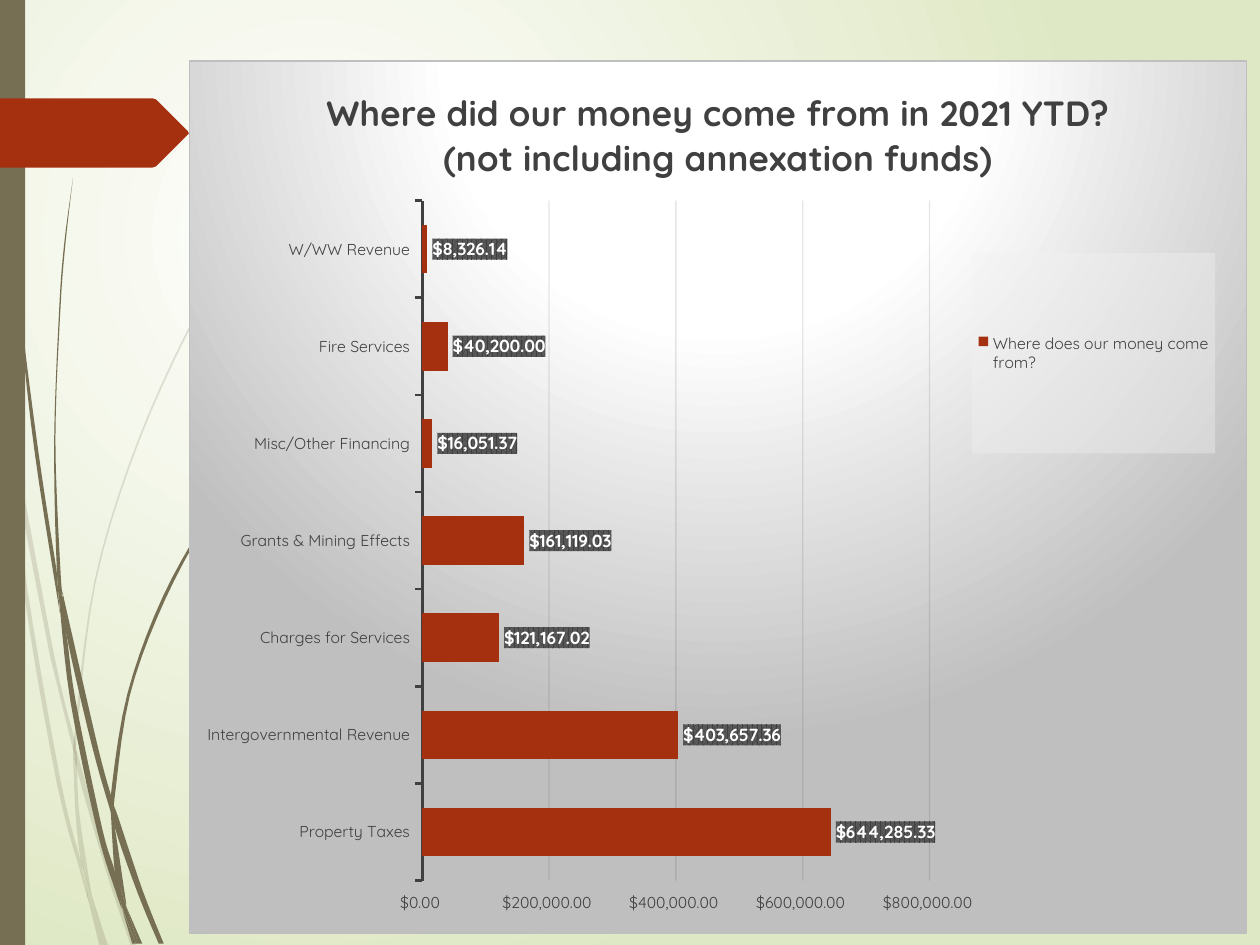
"""Build a slide with a bar chart of 2021 revenue sources beside a grass motif."""
import pptx
import pptx.chart.data
import pptx.dml.color
import pptx.enum.chart
import pptx.oxml
import pptx.oxml.ns
import pptx.util
from pptx.util import Inches

THEME = {
    "font": "Quicksand",
    "olive": "766F54", "rust": "A53010", "ink": "404040", "white": "FFFFFF",
    "border": "BFBFBF", "leaf": "DFE8C4", "grid": "0D0D0D", "legend": "F2F2F2", "stripe": "595959",
    "title_size": 20, "label_size": 10, "axis_size": 9,
}
rgb = {key: pptx.dml.color.RGBColor.from_string(value)
       for key, value in THEME.items() if isinstance(value, str) and key != "font"}
namespaces = pptx.oxml.ns.nsdecls("a", "c")
qn = pptx.oxml.ns.qn


def radial_gradient(stops, left, top, right, bottom):
    """Return the XML of a circular gradient."""
    marks = "".join(f'<a:gs pos="{position * 1000}"><a:srgbClr val="{THEME[key]}"/></a:gs>'
                    for position, key in stops)
    return (f'<a:gradFill {namespaces} rotWithShape="1"><a:gsLst>{marks}</a:gsLst><a:path path="circle">'
            f'<a:fillToRect l="{left * 1000}" t="{top * 1000}" r="{right * 1000}" b="{bottom * 1000}"/>'
            '</a:path></a:gradFill>')


def smooth_edge(points, steps=5):
    """Return points along a smooth curve through the given points in inches."""
    ends = [points[0], *points, points[-1]]
    curve = []
    for p0, p1, p2, p3 in zip(ends, ends[1:], ends[2:], ends[3:]):
        for step in range(steps):
            t = step / steps
            curve.append(tuple(
                Inches(b + t * (c - a) / 2 + t * t * (a - 2.5 * b + 2 * c - d / 2)
                       + t ** 3 * (1.5 * (b - c) + (d - a) / 2))
                for a, b, c, d in zip(p0, p1, p2, p3)))
    return curve + [(Inches(points[-1][0]), Inches(points[-1][1]))]


deck = pptx.Presentation()
deck.slide_width, deck.slide_height = Inches(10), Inches(7.5)
slide = deck.slides.add_slide(deck.slide_layouts[6])
slide.background.fill.solid()
solid = next(slide.background._cSld.iter(qn("a:solidFill")))
solid.getparent().replace(solid, pptx.oxml.parse_xml(
    radial_gradient([(0, "white"), (100, "leaf")], 50, 50, 100, 100)))

pale_blades = [
    ([(0.08, 3.5), (0.06, 3.22), (0, 2.82)], [(0, 2.99), (0.07, 3.44), (0.08, 3.5)]),
    ([(0.4, 5.22), (0.59, 5.99)],
     [(0.59, 5.86), (0.43, 5.2), (0.1, 3.45), (0.12, 3.76), (0.4, 5.22)]),
    ([(0.61, 5.96), (0.61, 6.1), (0.85, 6.94), (1.04, 7.51)],
     [(1.08, 7.51), (0.88, 6.92), (0.64, 6.07), (0.61, 5.96)]),
    ([(0.83, 7.51), (0.86, 7.51)], [(0.73, 7.11), (0.83, 7.51)]),
    ([(0.64, 6.83), (0.48, 6.19), (0.22, 4.69), (0.12, 3.76), (0.08, 3.5)],
     [(0.08, 3.5), (0.19, 4.7), (0.45, 6.21), (0.64, 6.93), (0.7, 7.14), (0.69, 7.07)]),
    ([(0.58, 5.99), (0.6, 6.46), (0.64, 6.83), (0.67, 6.92), (0.73, 7.11)],
     [(0.72, 7.06), (0.63, 6.46), (0.61, 6.1), (0.58, 5.99)]),
    ([(0.61, 5.96), (0.61, 5.84), (0.76, 4.62), (1.11, 3.49), (1.59, 2.45), (2.01, 1.75), (2.17, 1.54)],
     [(2.17, 1.53), (2.01, 1.75), (1.58, 2.44), (1.1, 3.48), (0.75, 4.61), (0.59, 5.84), (0.61, 5.96)]),
    ([(0.7, 7.14), (0.79, 7.51)], [(0.82, 7.51), (0.7, 7.14)]),
    ([(0.61, 6.08), (0.61, 5.96), (0.59, 5.86)], [(0.58, 5.99), (0.61, 6.08)]),
    ([(0.67, 6.92), (0.65, 6.83), (0.69, 7.07), (0.7, 7.14), (0.82, 7.51)],
     [(0.83, 7.51), (0.73, 7.11), (0.67, 6.92)]),
]
dark_blades = [
    ([(0.02, 0), (0.05, 1.1), (0.14, 2.33), (0.27, 3.55), (0.46, 4.77), (0.47, 4.81)],
     [(0.45, 4.53), (0.3, 3.55), (0.15, 2.32), (0.06, 1.09), (0.03, 0)]),
    ([(0.5, 4.72), (0.53, 5.05), (0.73, 5.92), (0.88, 6.45)],
     [(0.88, 6.31), (0.77, 5.9), (0.5, 4.72)]),
    ([(0.91, 6.41), (0.91, 6.56), (1.09, 7.08), (1.26, 7.49)],
     [(1.3, 7.49), (1.13, 7.06), (0.94, 6.49), (0.91, 6.41)]),
    ([(0.47, 4.77), (0.56, 5.57), (0.77, 6.59), (0.92, 7.08), (0.97, 7.22)],
     [(0.96, 7.17), (0.91, 6.91), (0.81, 6.57), (0.6, 5.56), (0.53, 5.05), (0.47, 4.77)]),
    ([(0.5, 4.72), (0.48, 4.53), (0.44, 3.49), (0.48, 2.45), (0.52, 1.93), (0.58, 1.41)],
     [(0.58, 1.41), (0.51, 1.93), (0.47, 2.45), (0.43, 3.49), (0.45, 4.49), (0.49, 4.72)]),
    ([(1, 7.19), (1.1, 7.49)], [(1.13, 7.49), (1, 7.19)]),
    ([(0.45, 4.49), (0.47, 4.77), (0.53, 5.05)], [(0.5, 4.72), (0.49, 4.72), (0.45, 4.49)]),
    ([(0.91, 6.41), (0.91, 6.33), (1.03, 5.52), (1.31, 4.76), (1.69, 4.06), (2.03, 3.59), (2.16, 3.44)],
     [(2.15, 3.44), (2.03, 3.58), (1.68, 4.05), (1.29, 4.74), (1.01, 5.51), (0.88, 6.31), (0.91, 6.41)]),
    ([(0.97, 7.22), (1.05, 7.49)], [(1.08, 7.49), (0.97, 7.22)]),
    ([(0.88, 6.45), (0.91, 6.91), (0.96, 7.06), (1, 7.19)],
     [(1, 7.16), (0.91, 6.56), (0.88, 6.45)]),
    ([(0.88, 6.45), (0.91, 6.56), (0.91, 6.41)], [(0.88, 6.31), (0.88, 6.45)]),
    ([(0.96, 7.06), (0.91, 6.91), (0.96, 7.17), (1.08, 7.49)],
     [(1.1, 7.49), (1, 7.19), (0.96, 7.06)]),
]
for blades, opacity in ((pale_blades, 20), (dark_blades, 100)):
    for outward, back in blades:
        outline = smooth_edge(outward) + smooth_edge(back)
        builder = slide.shapes.build_freeform(*outline[0])
        builder.add_line_segments(outline[1:])
        blade = builder.convert_to_shape()
        blade.shadow.inherit = False
        blade.fill.solid()
        blade.fill.fore_color.rgb = rgb["olive"]
        blade.line.fill.background()
        if opacity < 100:
            color = blade._element.spPr.find(qn("a:solidFill"))[0]
            color.append(pptx.oxml.parse_xml(f'<a:alpha {namespaces} val="{opacity * 1000}"/>'))

side_band = slide.shapes.add_shape(
    pptx.enum.shapes.MSO_SHAPE.RECTANGLE, 0, 0, Inches(0.2), Inches(7.5))
builder = slide.shapes.build_freeform(0, Inches(0.78))
builder.add_line_segments([(Inches(x), Inches(y)) for x, y in (
    (1.21, 0.78), (1.24, 0.79), (1.49, 1.04), (1.5, 1.06), (1.49, 1.07),
    (1.24, 1.32), (1.21, 1.33), (0, 1.33))])
arrow_tab = builder.convert_to_shape()
for accent, color_key in ((side_band, "olive"), (arrow_tab, "rust")):
    accent.shadow.inherit = False
    accent.fill.solid()
    accent.fill.fore_color.rgb = rgb[color_key]
    accent.line.fill.background()

revenue = {
    "Property Taxes": 644285.33,
    "Intergovernmental Revenue": 403657.36,
    "Charges for Services": 121167.02,
    "Grants & Mining Effects": 161119.03,
    "Misc/Other Financing": 16051.37,
    "Fire Services": 40200,
    "W/WW Revenue": 8326.14,
}
revenue_data = pptx.chart.data.CategoryChartData()
revenue_data.categories = list(revenue)
revenue_data.add_series("Where does our money come from?", list(revenue.values()))
chart = slide.shapes.add_chart(
    pptx.enum.chart.XL_CHART_TYPE.BAR_CLUSTERED,
    Inches(1.5), Inches(0.48), Inches(8.4), Inches(6.93), revenue_data).chart

chart.has_title = True
heading = chart.chart_title.text_frame
heading.text = "Where did our money come from in 2021 YTD?\n(not including annexation funds)"
chart.has_legend = True
legend = chart.legend
legend.position = pptx.enum.chart.XL_LEGEND_POSITION.RIGHT
legend.include_in_layout = False

plot = chart.plots[0]
plot.gap_width, plot.overlap, plot.vary_by_categories = 100, -100, False
bars = plot.series[0]
bars.invert_if_negative = False
bars.format.fill.solid()
bars.format.fill.fore_color.rgb = rgb["rust"]
labels = bars.data_labels
labels.show_value = True
labels.number_format, labels.number_format_is_linked = '"$"#,##0.00', False
labels.position = pptx.enum.chart.XL_LABEL_POSITION.OUTSIDE_END

sources, amounts = chart.category_axis, chart.value_axis
sources.has_major_gridlines = False
sources.format.line.color.rgb = rgb["ink"]
sources.format.line.width = pptx.util.Pt(1.5)
amounts.minimum_scale, amounts.maximum_scale, amounts.major_unit = 0, 800000, 200000
amounts.tick_labels.number_format = r'"$"#,##0.00_);[Red]\("$"#,##0.00\)'
amounts.tick_labels.number_format_is_linked = False
amounts.format.line.fill.background()
gridline = amounts.major_gridlines.format.line
gridline.color.rgb = rgb["grid"]
gridline.width = pptx.util.Pt(0.75)
next(amounts.major_gridlines._xAx.find(qn("c:majorGridlines")).iter(qn("a:srgbClr"))).append(
    pptx.oxml.parse_xml(f'<a:alpha {namespaces} val="10000"/>'))

fonts = [(chart.font, "label_size", "ink", False), (legend.font, "axis_size", "ink", False),
         (labels.font, "label_size", "white", True)]
fonts += [(axis.tick_labels.font, "axis_size", "ink", False) for axis in (sources, amounts)]
fonts += [(line.font, "title_size", "ink", True) for line in heading.paragraphs]
for font, size, color_key, bold in fonts:
    font.name, font.size, font.bold = THEME["font"], pptx.util.Pt(THEME[size]), bold
    font.color.rgb = rgb[color_key]

backdrop = radial_gradient([(0, "white"), (39, "white"), (100, "border")], 50, -80, 50, 180)
border = f'<a:ln w="9525"><a:solidFill><a:srgbClr val="{THEME["border"]}"/></a:solidFill></a:ln>'
stripes = (f'<a:pattFill prst="pct75"><a:fgClr><a:srgbClr val="{THEME["ink"]}"/></a:fgClr>'
           f'<a:bgClr><a:srgbClr val="{THEME["stripe"]}"/></a:bgClr></a:pattFill>')
veil = f'<a:solidFill><a:srgbClr val="{THEME["legend"]}"><a:alpha val="39000"/></a:srgbClr></a:solidFill>'
for part, look in ((chart._chartSpace, backdrop + border), (labels._element, stripes),
                   (legend._element, veil)):
    part.find(qn("c:txPr")).addprevious(
        pptx.oxml.parse_xml(f"<c:spPr {namespaces}>{look}</c:spPr>"))

for part, index, target, box in (
        (chart._chartSpace.chart.plotArea, 0, '<c:layoutTarget val="inner"/>', (0.22, 0.16, 0.48, 0.78)),
        (legend._element, 1, "", (0.74, 0.22, 0.23, 0.23))):
    for old_layout in part.findall(qn("c:layout")):
        part.remove(old_layout)
    sizes = "".join(f'<c:{tag} val="{value}"/>' for tag, value in zip("xywh", box))
    part.insert(index, pptx.oxml.parse_xml(
        f'<c:layout {namespaces}><c:manualLayout>{target}<c:xMode val="edge"/><c:yMode val="edge"/>'
        f'{sizes}</c:manualLayout></c:layout>'))

deck.save("out.pptx")
